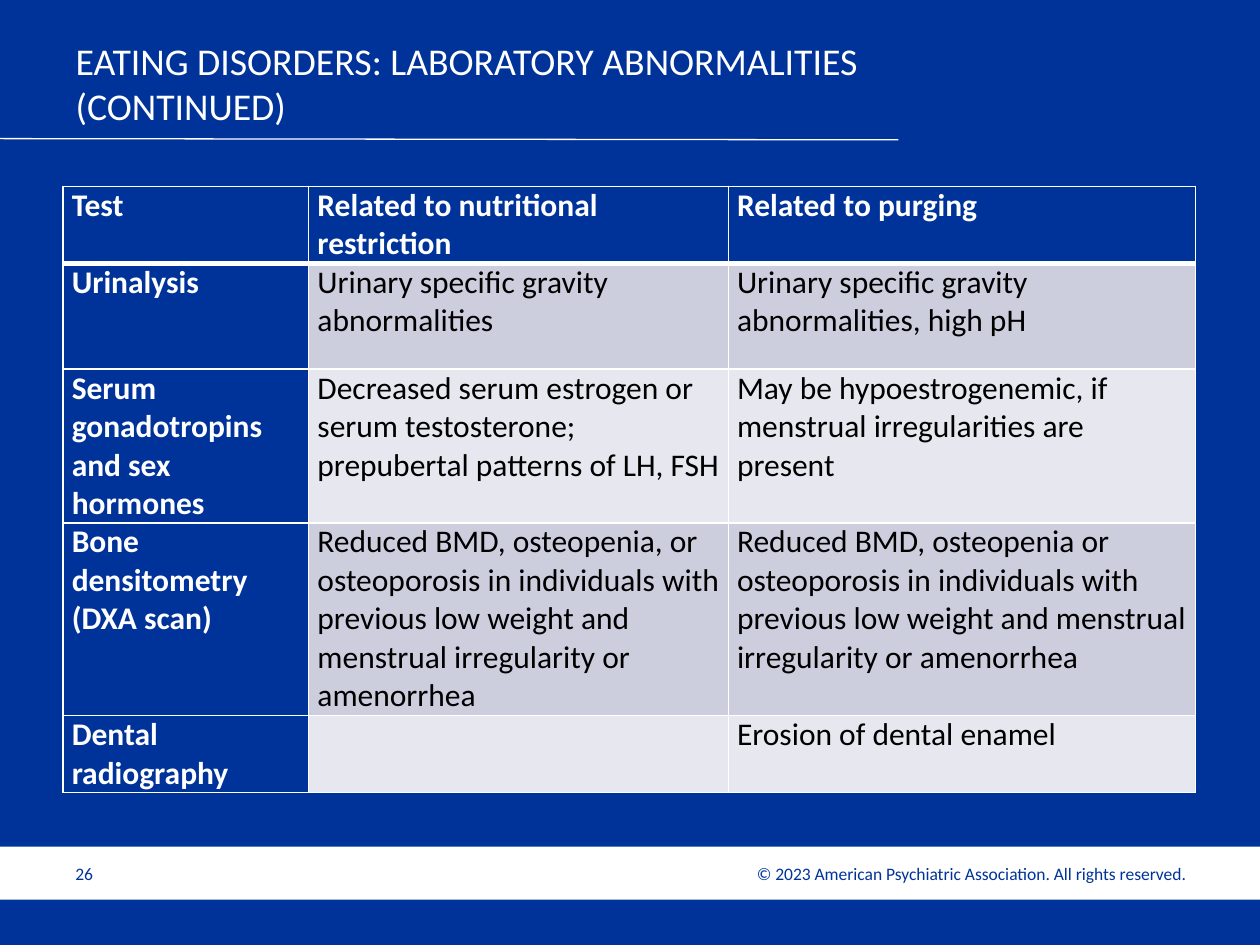
from lxml.etree import SubElement
from pptx import Presentation
from pptx.dml.color import RGBColor
from pptx.enum.shapes import MSO_CONNECTOR, MSO_SHAPE
from pptx.enum.text import MSO_ANCHOR, PP_ALIGN
from pptx.oxml.ns import qn
from pptx.util import Inches, Pt

BLUE, WHITE, BLACK = "003399", "FFFFFF", "000000"
BANDS = ["CCCEDE", "E7E8EF"]
COLUMN_WIDTHS = [1.95, 3.33, 3.71]
ROW_HEIGHTS = [0.61, 0.84, 1.22, 1.53, 0.61]
LAB_TESTS = [
    ["Test", "Related to nutritional restriction", "Related to purging"],
    ["Urinalysis", "Urinary specific gravity abnormalities",
     "Urinary specific gravity abnormalities, high pH"],
    ["Serum gonadotropins and sex hormones",
     "Decreased serum estrogen or serum testosterone; prepubertal patterns of LH, FSH",
     "May be hypoestrogenemic, if menstrual irregularities are present"],
    ["Bone densitometry\n(DXA scan)",
     "Reduced BMD, osteopenia, or osteoporosis in individuals with previous low weight "
     "and menstrual irregularity or amenorrhea",
     "Reduced BMD, osteopenia or osteoporosis in individuals with\n"
     "previous low weight and menstrual irregularity or amenorrhea"],
    ["Dental radiography", "", "Erosion of dental enamel"],
]


def color(value):
    """Return the colour for a hex string."""
    return RGBColor.from_string(value)


def set_fill(target, value):
    """Fill a shape, cell or background with a solid colour."""
    target.fill.solid()
    target.fill.fore_color.rgb = color(value)


def write_text(frame, text, size, font_color, bold=False, align=PP_ALIGN.LEFT):
    """Write text into a frame and format each paragraph."""
    frame.text = text
    frame.word_wrap = True
    font_format = {"name": "Calibri", "size": Pt(size), "bold": bold}
    for paragraph in frame.paragraphs:
        paragraph.alignment = align
        for name, value in font_format.items():
            setattr(paragraph.font, name, value)
        paragraph.font.color.rgb = color(font_color)


def place(shape, box):
    """Move and size a shape to a box given in inches."""
    for name, value in zip(["left", "top", "width", "height"], box):
        setattr(shape, name, Inches(value))


def add_header(slide, box):
    """Place the title in its box and a rule below it."""
    left, top, width, height = box
    title = slide.shapes.title
    place(title, box)
    write_text(title.text_frame, "EATING DISORDERS: LABORATORY ABNORMALITIES (CONTINUED)",
               21.6, WHITE)
    title.text_frame.vertical_anchor = MSO_ANCHOR.MIDDLE
    rule_top = Inches(top + height + 0.12)
    rule = slide.shapes.add_connector(
        MSO_CONNECTOR.STRAIGHT, 0, rule_top, Inches(left + width), rule_top + Inches(0.01))
    rule.line.color.rgb = color(WHITE)
    rule.line.width = Pt(0.75)
    SubElement(rule._element.spPr, qn("a:effectLst"))


def set_borders(cell, widths):
    """Draw white borders of the given point widths by side."""
    properties = cell._tc.get_or_add_tcPr()
    for side, width in widths.items():
        line = SubElement(properties, qn(f"a:ln{side}"), w=str(Pt(width)))
        fill = SubElement(line, qn("a:solidFill"))
        SubElement(fill, qn("a:srgbClr"), val=WHITE)


def add_lab_table(slide, box):
    """Place the table of laboratory abnormalities."""
    frame = slide.shapes.add_table(
        len(LAB_TESTS), len(COLUMN_WIDTHS), *[Inches(value) for value in box])
    table = frame.table
    for column, width in zip(table.columns, COLUMN_WIDTHS):
        column.width = Inches(width)
    for row, height in zip(table.rows, ROW_HEIGHTS):
        row.height = Inches(height)
    margins = {"margin_left": 0.07, "margin_right": 0.07, "margin_top": 0, "margin_bottom": 0}
    for row_index, texts in enumerate(LAB_TESTS):
        for column_index, text in enumerate(texts):
            cell = table.cell(row_index, column_index)
            heading = row_index == 0 or column_index == 0
            for name, value in margins.items():
                setattr(cell, name, Inches(value))
            set_borders(cell, {"L": 1, "R": 1, "T": 3 if row_index == 1 else 1,
                               "B": 3 if row_index == 0 else 1})
            set_fill(cell, BLUE if heading else BANDS[(row_index - 1) % 2])
            write_text(cell.text_frame, text, 18, WHITE if heading else BLACK, heading)


def add_footer(slide, box):
    """Place the white band with page number and copyright line."""
    left, top, width, height = box
    band = slide.shapes.add_shape(MSO_SHAPE.RECTANGLE, *[Inches(value) for value in box])
    band.shadow.inherit = False
    set_fill(band, WHITE)
    band.line.fill.background()
    notes = [
        ("26", left + 0.5, 2.33, PP_ALIGN.LEFT),
        ("© 2023 American Psychiatric Association. All rights reserved.",
         left + width - 4.82, 4.33, PP_ALIGN.RIGHT),
    ]
    for text, text_left, text_width, align in notes:
        text_box = slide.shapes.add_textbox(
            Inches(text_left), Inches(top), Inches(text_width), Inches(height))
        write_text(text_box.text_frame, text, 10, BLUE, align=align)
        text_box.text_frame.vertical_anchor = MSO_ANCHOR.MIDDLE


def main():
    """Build and save the presentation."""
    presentation = Presentation()
    presentation.slide_width, presentation.slide_height = Inches(10), Inches(7.5)
    slide = presentation.slides.add_slide(presentation.slide_layouts[5])
    set_fill(slide.background, BLUE)
    add_footer(slide, (0, 6.72, 10, 0.42))
    add_header(slide, (0.5, 0.34, 6.63, 0.64))
    add_lab_table(slide, (0.5, 1.48, sum(COLUMN_WIDTHS), sum(ROW_HEIGHTS)))
    presentation.save("out.pptx")


if __name__ == "__main__":
    main()
